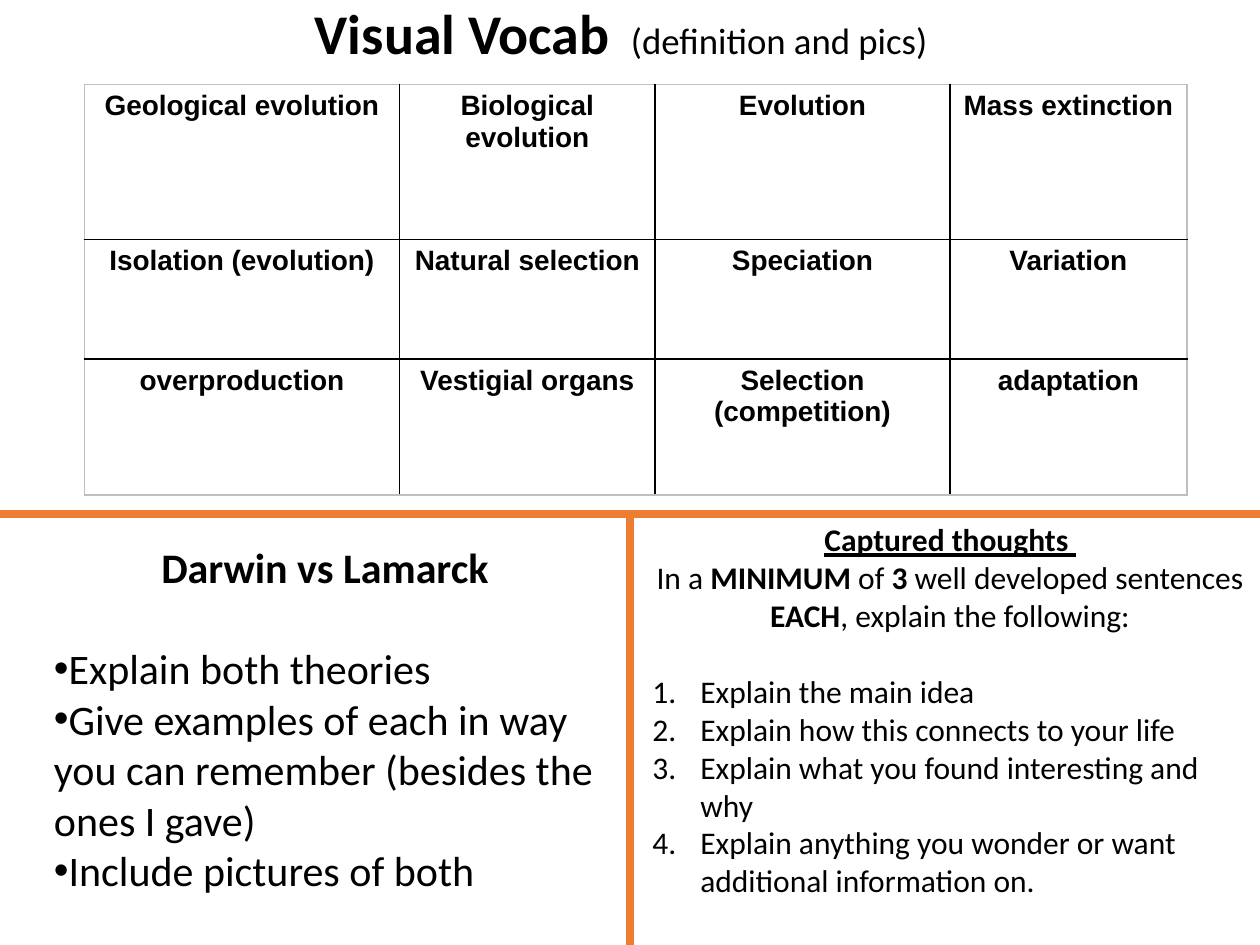
import itertools
from dataclasses import dataclass

import lxml.etree
import pptx
import pptx.dml.color
import pptx.enum.shapes
import pptx.enum.text
import pptx.oxml
import pptx.oxml.ns
import pptx.util

Inches = pptx.util.Inches
Pt = pptx.util.Pt
qn = pptx.oxml.ns.qn
CENTER = pptx.enum.text.PP_ALIGN.CENTER
LEFT = pptx.enum.text.PP_ALIGN.LEFT


@dataclass(frozen=True)
class Theme:
    text: str = "000000"
    accent: str = "ED7D31"
    grid: str = "000000"
    frame: str = "BFBFBF"
    body_font: str = "Calibri"
    table_font: str = "Arial"
    title_size: int = 32
    subtitle_size: int = 21
    theory_size: int = 24
    thought_size: int = 18
    table_size: int = 16
    divider_width: float = 4.5
    border_width: int = 1


class SlideBuilder:
    def __init__(self, slide, theme):
        self.slide = slide
        self.theme = theme

    def add_runs(self, para, runs, size, font=None):
        """Add (text, format) pairs; a format value overrides the shared style."""
        for text, changes in runs:
            span = para.add_run()
            span.text = text
            style = {"name": font or self.theme.body_font, "size": Pt(size),
                     "bold": False, **changes}
            for attribute, value in style.items():
                setattr(span.font, attribute, value)
            span.font.color.rgb = pptx.dml.color.RGBColor.from_string(self.theme.text)

    def format_paragraph(self, para, **values):
        for attribute, value in values.items():
            setattr(para, attribute, value)

    def set_bullet(self, para, indent, tag, **attributes):
        properties = para._p.get_or_add_pPr()
        properties.set("marL", str(Inches(indent)))
        properties.set("indent", str(-Inches(indent)))
        if tag == "a:buChar":
            font = lxml.etree.SubElement(properties, qn("a:buFont"))
            font.set("typeface", self.theme.table_font)
        bullet = lxml.etree.SubElement(properties, qn(tag))
        for name, value in attributes.items():
            bullet.set(name, value)

    def title(self, runs, left, top, width, height):
        box = self.slide.shapes.title
        place = {"left": left, "top": top, "width": width, "height": height}
        for attribute, value in place.items():
            setattr(box, attribute, Inches(value))
        frame = box.text_frame
        frame.auto_size = pptx.enum.text.MSO_AUTO_SIZE.NONE
        frame.vertical_anchor = pptx.enum.text.MSO_ANCHOR.TOP
        para = frame.paragraphs[0]
        self.format_paragraph(para, alignment=CENTER, line_spacing=0.9)
        for text, size, bold in runs:
            self.add_runs(para, [(text, {"bold": bold})], size)

    def text_box(self, left, top, width, height, size, headings, items, gap, bullet):
        """Centred headings, a gap in points, then a list with one bullet format."""
        box = self.slide.shapes.add_textbox(*map(Inches, (left, top, width, height)))
        frame = box.text_frame
        frame.word_wrap = True
        paragraphs = itertools.chain(
            frame.paragraphs, iter(frame.add_paragraph, None))
        for runs in headings:
            para = next(paragraphs)
            self.format_paragraph(para, alignment=CENTER)
            self.add_runs(para, runs, size)
        for number, item in enumerate(items):
            para = next(paragraphs)
            self.format_paragraph(
                para, alignment=LEFT, space_before=Pt(0 if number else gap))
            self.set_bullet(para, **bullet)
            self.add_runs(para, [(item, {})], size)

    def divider(self, start, end):
        line = self.slide.shapes.add_connector(
            pptx.enum.shapes.MSO_CONNECTOR.STRAIGHT, *map(Inches, start + end))
        line.line.color.rgb = pptx.dml.color.RGBColor.from_string(self.theme.accent)
        line.line.width = Pt(self.theme.divider_width)
        lxml.etree.SubElement(line._element.spPr, qn("a:effectLst"))

    def set_borders(self, cell, colors):
        properties = cell._tc.get_or_add_tcPr()
        for position, (side, color) in enumerate(colors.items()):
            border = lxml.etree.Element(qn("a:ln" + side))
            border.set("w", str(Pt(self.theme.border_width)))
            fill = lxml.etree.SubElement(border, qn("a:solidFill"))
            lxml.etree.SubElement(fill, qn("a:srgbClr")).set("val", color)
            properties.insert(position, border)

    def table(self, left, top, widths, heights, words):
        shape = self.slide.shapes.add_table(
            len(heights), len(widths), Inches(left), Inches(top),
            Inches(sum(widths)), Inches(sum(heights)))
        table = shape.table
        table.first_row = table.horz_banding = False
        for column, width in zip(table.columns, widths):
            column.width = Inches(width)
        for row, height in zip(table.rows, heights):
            row.height = Inches(height)
        last_row, last_column = len(heights) - 1, len(widths) - 1
        for (r, row), c in itertools.product(enumerate(words), range(len(widths))):
            cell = table.cell(r, c)
            cell.fill.background()
            outer = {"L": c == 0, "R": c == last_column,
                     "T": r == 0, "B": r == last_row}
            self.set_borders(cell, {
                side: self.theme.frame if is_outer else self.theme.grid
                for side, is_outer in outer.items()})
            para = cell.text_frame.paragraphs[0]
            self.format_paragraph(para, alignment=CENTER)
            self.add_runs(para, [(row[c], {"bold": True})],
                          self.theme.table_size, self.theme.table_font)


def main():
    deck = pptx.Presentation()
    deck.slide_width, deck.slide_height = Inches(10), Inches(7.5)
    theme = Theme()
    page = SlideBuilder(deck.slides.add_slide(deck.slide_layouts[5]), theme)
    bold = {"bold": True}

    page.title([("Visual Vocab ", theme.title_size, True),
                (" (definition and pics)", theme.subtitle_size, False)],
               0.68, 0, 8.5, 0.67)
    page.table(0.67, 0.67, [2.5, 2.03, 2.34, 1.88], [1.23, 0.95, 1.08], [
        ["Geological evolution", "Biological evolution", "Evolution", "Mass extinction"],
        ["Isolation (evolution)", "Natural selection", "Speciation", "Variation"],
        ["overproduction", "Vestigial organs", "Selection (competition)", "adaptation"],
    ])

    middle, split = 5, 4.08
    page.divider((middle, split), (middle, 7.5))
    page.divider((0, split), (10, split))

    page.text_box(
        5.08, split, 4.92, 3.13, theme.thought_size,
        headings=[
            [("Captured thoughts ", {"bold": True, "underline": True})],
            [("In a ", {}), ("MINIMUM", bold), (" of ", {}), ("3", bold),
             (" well developed sentences ", {}), ("EACH", bold),
             (", explain the following:", {})],
        ],
        items=["Explain the main idea",
               "Explain how this connects to your life",
               "Explain what you found interesting and why",
               "Explain anything you wonder or want additional information on."],
        gap=22,
        bullet={"indent": 0.38, "tag": "a:buAutoNum", "type": "arabicPeriod"})
    page.text_box(
        0.33, 4.25, 4.5, 2.93, theme.theory_size,
        headings=[[("Darwin vs Lamarck", bold)]],
        items=["Explain both theories",
               "Give examples of each in way you can remember (besides the ones I gave)",
               "Include pictures of both"],
        gap=29,
        bullet={"indent": 0, "tag": "a:buChar", "char": "•"})

    deck.save("out.pptx")


if __name__ == "__main__":
    main()
